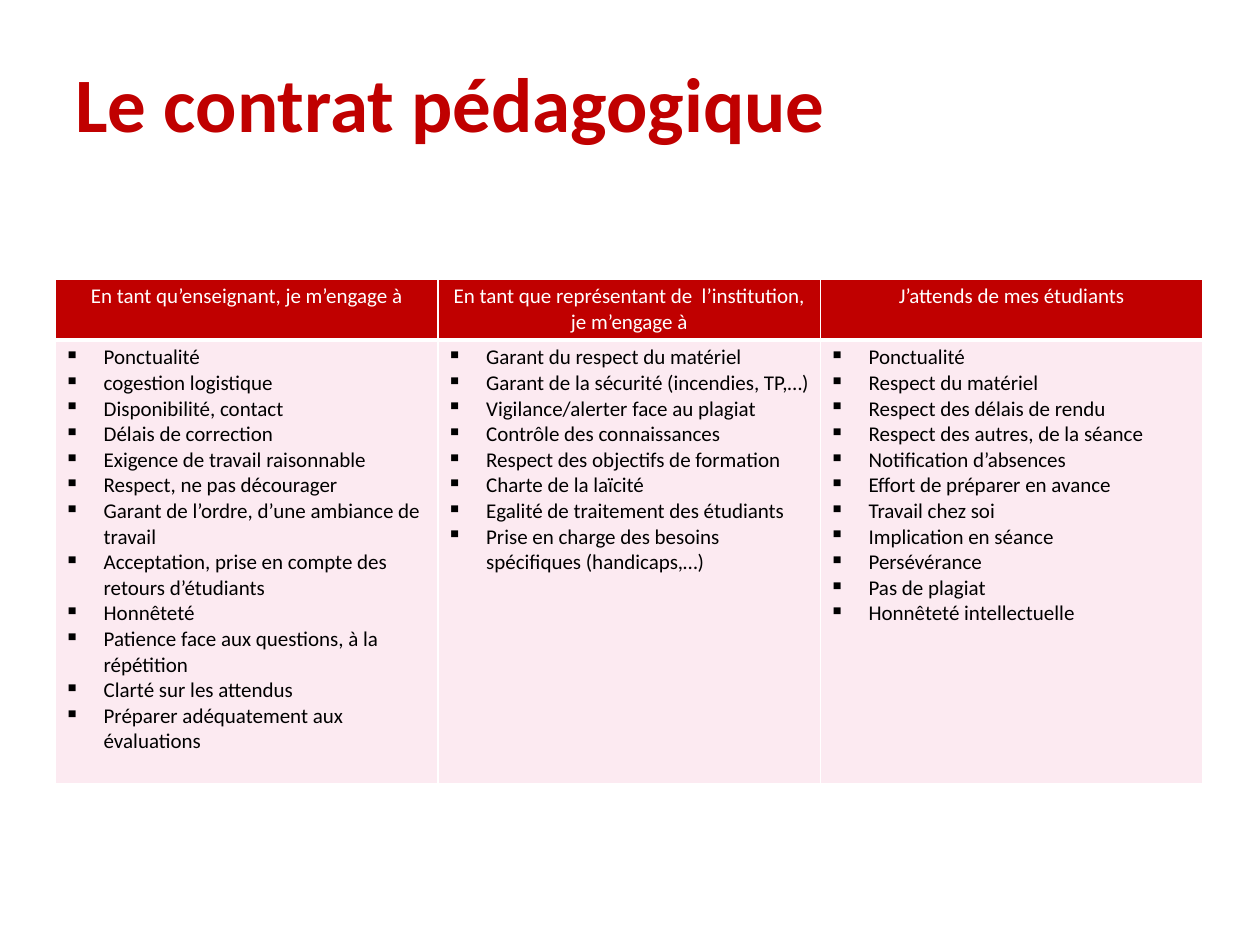
"""Build the teaching contract slide: a title and a three-column table of commitments."""
from lxml import etree
from pptx import Presentation
from pptx import util as u
from pptx.dml.color import RGBColor
from pptx.enum import text
from pptx.oxml.ns import qn

TITLE = "Le contrat pédagogique"
COMMITMENTS = {
    "En tant qu’enseignant, je m’engage à": [
        "Ponctualité",
        "cogestion logistique",
        "Disponibilité, contact",
        "Délais de correction",
        "Exigence de travail raisonnable",
        "Respect, ne pas décourager",
        "Garant de l’ordre, d’une ambiance de travail",
        "Acceptation, prise en compte des retours d’étudiants",
        "Honnêteté",
        "Patience face aux questions, à la répétition",
        "Clarté sur les attendus",
        "Préparer adéquatement aux évaluations",
    ],
    "En tant que représentant de  l’institution, je m’engage à": [
        "Garant du respect du matériel",
        "Garant de la sécurité (incendies, TP,…)",
        "Vigilance/alerter face au plagiat",
        "Contrôle des connaissances",
        "Respect des objectifs de formation",
        "Charte de la laïcité",
        "Egalité de traitement des étudiants",
        "Prise en charge des besoins spécifiques (handicaps,…)",
    ],
    "J’attends de mes étudiants": [
        "Ponctualité",
        "Respect du matériel",
        "Respect des délais de rendu",
        "Respect des autres, de la séance",
        "Notification d’absences",
        "Effort de préparer en avance",
        "Travail chez soi",
        "Implication en séance",
        "Persévérance",
        "Pas de plagiat",
        "Honnêteté intellectuelle",
    ],
}
COLORS = {"red": "C00000", "pink": "FCEAF1", "white": "FFFFFF", "black": "000000"}
FONT = "Calibri"
ROW_HEIGHTS = (1.21, 8.95)
TABLE_WIDTH = 23.13
BULLET_INDENT = u.Cm(0.79)


def style(paragraph, size, color, bold=False):
    """Set the font of a whole paragraph."""
    font = paragraph.font
    font.name, font.size, font.bold = FONT, u.Pt(size), bold
    font.color.rgb = RGBColor.from_string(COLORS[color])


def add_bullet(paragraph):
    """Give a paragraph a square bullet and a hanging indent."""
    properties = paragraph._p.get_or_add_pPr()
    properties.set("marL", str(BULLET_INDENT))
    properties.set("indent", str(-BULLET_INDENT))
    bullet = etree.Element(qn("a:buChar"), char="▪")
    properties.insert_element_before(bullet, "a:tabLst", "a:defRPr", "a:extLst")


def add_borders(cell, bottom):
    """Draw white borders round a cell, with its own bottom width."""
    properties = cell._tc.get_or_add_tcPr()
    for side, width in {"L": 1, "R": 1, "T": 1, "B": bottom}.items():
        line = etree.SubElement(properties, qn(f"a:ln{side}"), w=str(u.Pt(width)))
        fill = etree.SubElement(line, qn("a:solidFill"))
        etree.SubElement(fill, qn("a:srgbClr"), val=COLORS["white"])


def fill_cell(cell, lines, is_header):
    """Write the lines of one cell and style it as header or list."""
    cell.margin_left = cell.margin_right = u.Cm(0.18)
    cell.margin_top = cell.margin_bottom = u.Cm(0.1)
    add_borders(cell, 3 if is_header else 1)
    cell.fill.solid()
    cell.fill.fore_color.rgb = RGBColor.from_string(COLORS["red" if is_header else "pink"])
    cell.text_frame.text = "\n".join(lines)
    for paragraph in cell.text_frame.paragraphs:
        style(paragraph, 12, "white" if is_header else "black")
        if is_header:
            paragraph.alignment = text.PP_ALIGN.CENTER
        else:
            add_bullet(paragraph)


def add_title(page):
    """Place the slide title."""
    box = page.shapes.add_textbox(u.Cm(1.27), u.Cm(0.58), u.Cm(22.86), u.Cm(3.18))
    frame = box.text_frame
    frame.word_wrap = True
    frame.vertical_anchor = text.MSO_ANCHOR.MIDDLE
    frame.text = TITLE
    para = frame.paragraphs[0]
    para.line_spacing = 0.9
    style(para, 44, "red", bold=True)


def add_commitments(page):
    """Place the table with one column per role."""
    table = page.shapes.add_table(
        len(ROW_HEIGHTS), len(COMMITMENTS),
        u.Cm(1.12), u.Cm(5.62), u.Cm(TABLE_WIDTH), u.Cm(sum(ROW_HEIGHTS)),
    ).table
    table.horz_banding = False
    for row, height in zip(table.rows, ROW_HEIGHTS):
        row.height = u.Cm(height)
    for index, (heading, items) in enumerate(COMMITMENTS.items()):
        table.columns[index].width = u.Cm(TABLE_WIDTH / len(COMMITMENTS))
        fill_cell(table.cell(0, index), [heading], True)
        fill_cell(table.cell(1, index), items, False)


def main():
    """Create and save the deck."""
    deck = Presentation()
    deck.slide_width, deck.slide_height = u.Cm(25.4), u.Cm(19.05)
    page = deck.slides.add_slide(deck.slide_layouts[6])
    add_commitments(page)
    add_title(page)
    deck.save("out.pptx")


if __name__ == "__main__":
    main()
